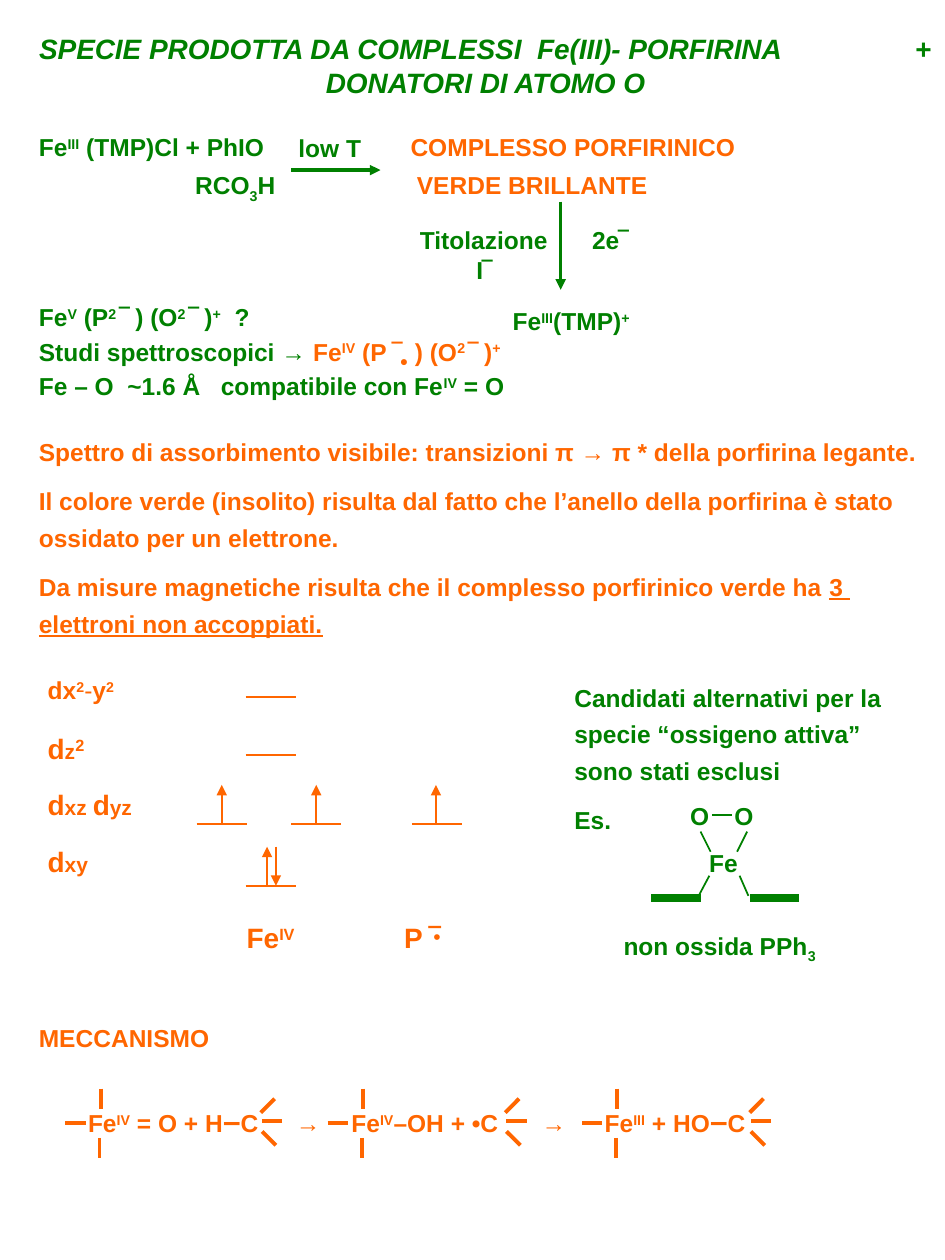
from dataclasses import dataclass

from lxml.etree import SubElement
from pptx import Presentation
from pptx.dml.color import RGBColor
from pptx.enum.shapes import MSO_CONNECTOR
from pptx.enum.text import MSO_ANCHOR, MSO_AUTO_SIZE, PP_ALIGN
from pptx.oxml.ns import qn
from pptx.util import Inches, Pt

COLS, ROWS = 750, 1000  # fine grid over the slide
CELL = Inches(0.01)


@dataclass(frozen=True)
class Theme:
    font: str = "Arial"
    green: RGBColor = RGBColor(0x00, 0x80, 0x00)
    orange: RGBColor = RGBColor(0xFF, 0x66, 0x00)
    small: int = 12
    body: int = 14
    large: int = 16
    dash: int = 18
    thin: float = 1
    arrow: float = 2
    bond: float = 2.25
    plane: float = 4.5


T = Theme()


@dataclass(frozen=True)
class Run:
    text: str
    base: int = 0
    size: int = 0
    color: RGBColor = None
    bold: bool = None
    underline: bool = None


def sup(text, **style):
    return Run(text, base=30, **style)


def sub(text):
    return Run(text, base=-25)


def cells(*values):
    return [int(v * CELL) for v in values]


def write(p, runs, color, size=T.body, before=0, spacing=None, align=None,
          bold=True, italic=None, tabs=()):
    """Fill a paragraph; tabs are (column, alignment) pairs."""
    p.space_before = Pt(before)
    p.alignment = align
    if spacing:
        p.line_spacing = spacing
    if tabs:
        tab_list = SubElement(p._p.get_or_add_pPr(), qn("a:tabLst"))
        for col, side in tabs:
            SubElement(tab_list, qn("a:tab"), pos=str(cells(col)[0]), algn=side)
    f = p.font
    f.name, f.size, f.bold, f.italic = T.font, Pt(size), bold, italic
    f.color.rgb = color
    for item in runs:
        item = item if isinstance(item, Run) else Run(item)
        r = p.add_run()
        r.text = item.text
        if item.base:
            r.font._element.set("baseline", str(item.base * 1000))
        if item.size:
            r.font.size = Pt(item.size)
        if item.color:
            r.font.color.rgb = item.color
        if item.bold is not None:
            r.font.bold = item.bold
        if item.underline:
            r.font.underline = True


def fill_frame(sp, paragraphs):
    """Write (runs, style) pairs into a shape."""
    tf = sp.text_frame
    tf.word_wrap = True
    tf.auto_size = MSO_AUTO_SIZE.NONE
    tf.vertical_anchor = MSO_ANCHOR.TOP
    for i, (runs, style) in enumerate(paragraphs):
        write(tf.add_paragraph() if i else tf.paragraphs[0], runs, **style)


def text(s, box, *paragraphs):
    fill_frame(s.shapes.add_textbox(*cells(*box)), paragraphs)


def label(s, box, *runs, **style):
    text(s, box, (runs, style))


def line(s, x1, y1, x2, y2, color, width=T.thin, arrow=False):
    c = s.shapes.add_connector(MSO_CONNECTOR.STRAIGHT, *cells(x1, y1, x2, y2))
    c.line.color.rgb = color
    c.line.width = Pt(width)
    if arrow:
        SubElement(c.line._get_or_add_ln(), qn("a:tailEnd"), type="triangle")
    SubElement(c._element.spPr, qn("a:effectLst"))


def title(s):
    sp = s.shapes.title
    sp.left, sp.top, sp.width, sp.height = cells(21, 20, 729, 65)
    style = dict(color=T.green, size=T.large, italic=True)
    fill_frame(sp, [
        (["SPECIE PRODOTTA DA COMPLESSI  Fe(III)- PORFIRINA\t+"],
         dict(style, align=PP_ALIGN.LEFT, tabs=[(708, "r")])),
        (["DONATORI DI ATOMO O"], dict(style, align=PP_ALIGN.CENTER)),
    ])


def reaction(s):
    text(s, (21, 100, 729, 65),
         (["Fe", sup("III"), " (TMP)Cl + PhIO",
           Run("\tCOMPLESSO PORFIRINICO", color=T.orange)],
          dict(color=T.green, tabs=[(295, "l")])),
         (["\tRCO", sub("3"), "H", Run("\tVERDE BRILLANTE", color=T.orange)],
          dict(color=T.green, before=5, tabs=[(124, "l"), (300, "l")])))
    label(s, (227, 101, 87, 33), "low T", color=T.green)
    line(s, 231, 135, 302, 135, T.green, T.arrow, arrow=True)
    label(s, (321, 174, 126, 57), "Titolazione I‾", color=T.green, align=PP_ALIGN.CENTER)
    line(s, 445, 160, 445, 230, T.green, T.arrow, arrow=True)
    label(s, (460, 174, 55, 33), "2e‾", color=T.green)
    label(s, (397, 238, 118, 33), "Fe", sup("III"), "(TMP)", sup("+"), color=T.green)


def discussion(s):
    green = dict(color=T.green, before=2.8)
    orange = dict(color=T.orange, before=7, spacing=1.25)
    text(s, (21, 235, 729, 288),
         (["Fe", sup("V"), " (P", sup("2 "), "‾ ) (O", sup("2 "), "‾ )", sup("+"), "  ?"],
          dict(color=T.green)),
         ([Run("Studi spettroscopici → ", color=T.green), "Fe", sup("IV"), " (P ‾  ) (O",
           sup("2 "), "‾ )", sup("+")], dict(color=T.orange, before=2.8)),
         (["Fe – O  ~1.6 Å   compatibile con Fe", sup("IV"), " = O"], green),
         (["Spettro di assorbimento visibile: transizioni π → π * della porfirina legante."],
          dict(color=T.orange, before=21)),
         (["Il colore verde (insolito) risulta dal fatto che l’anello della porfirina è stato "
           "ossidato per un elettrone."], orange),
         (["Da misure magnetiche risulta che il complesso porfirinico verde ha ",
           Run("3  elettroni non accoppiati.", underline=True)], orange))
    label(s, (308, 272, 39, 30), "•", color=T.orange, size=T.small)


def orbitals(s):
    names = [
        (531, T.body, ["dx", sup("2"), Run("-", bold=False), "y", sup("2")]),
        (576, T.large, ["d", Run("z", size=T.small), sup("2")]),
        (620, T.large, ["d", Run("xz ", size=T.small), "d", Run("yz", size=T.small)]),
        (665, T.large, ["d", Run("xy", size=T.small)]),
    ]
    for y, size, runs in names:
        label(s, (28, y, 102, 37), *runs, color=T.orange, size=size)
    for x, y in [(195, 553), (195, 599), (156, 654), (231, 654), (327, 654), (195, 703)]:
        line(s, x, y, x + 40, y, T.orange)
    for x, start, end in [(176, 654, 623), (251, 654, 623), (346, 654, 623),
                          (212, 703, 672), (219, 672, 703)]:
        line(s, x, start, x, end, T.orange, arrow=True)
    label(s, (186, 726, 67, 37), "Fe", sup("IV"), color=T.orange, size=T.large)
    label(s, (311, 726, 67, 37), "P ‾", color=T.orange, size=T.large)
    label(s, (334, 728, 31, 30), "•", color=T.orange, size=T.small, bold=False)


def candidates(s):
    style = dict(color=T.green, before=7, spacing=1.25)
    text(s, (446, 531, 291, 134),
         (["Candidati alternativi per la specie “ossigeno attiva” sono stati esclusi"], style),
         (["Es."], style))
    for x, y, atom in [(538, 631, "O"), (573, 631, "O"), (553, 668, "Fe")]:
        label(s, (x, y, 47, 33), atom, color=T.green)
    for ends in [(565, 647, 581, 647), (556, 660, 564, 676), (593, 660, 585, 676),
                 (555, 710, 563, 695), (587, 695, 594, 711)]:
        line(s, *ends, T.green)
    for x in (517, 595):
        line(s, x, 713, x + 39, 713, T.green, T.plane)
    label(s, (485, 734, 189, 33), "non ossida PPh", sub("3"), color=T.green)


def mechanism(s):
    label(s, (21, 807, 244, 33), "MECCANISMO", color=T.orange)
    dash = Run("–", size=T.dash)
    label(s, (60, 869, 559, 40), "Fe", sup("IV"), " = O + H", dash, "C\t→\tFe", sup("IV"),
          "–OH + •C\t→\tFe", sup("III"), " + HO", dash, "C", color=T.orange,
          tabs=[(col, "l") for col in (165, 209, 360, 410)])
    for x in (80, 288, 490):  # iron ligands
        line(s, x, 864, x, 880, T.orange, T.bond)
        line(s, x - 1, 903, x - 1, 919, T.orange, T.bond)
        line(s, x - 28, 891, x - 12, 891, T.orange, T.bond)
    for x in (207, 401, 595):  # carbon substituents
        line(s, x + 11, 872, x, 883, T.orange, T.bond)
        line(s, x + 17, 890, x + 1, 890, T.orange, T.bond)
        line(s, x + 12, 909, x + 1, 898, T.orange, T.bond)


def main():
    prs = Presentation()
    prs.slide_width, prs.slide_height = cells(COLS, ROWS)
    s = prs.slides.add_slide(prs.slide_layouts.get_by_name("Title Only"))
    for draw in (title, reaction, discussion, orbitals, candidates, mechanism):
        draw(s)
    prs.save("out.pptx")


if __name__ == "__main__":
    main()
